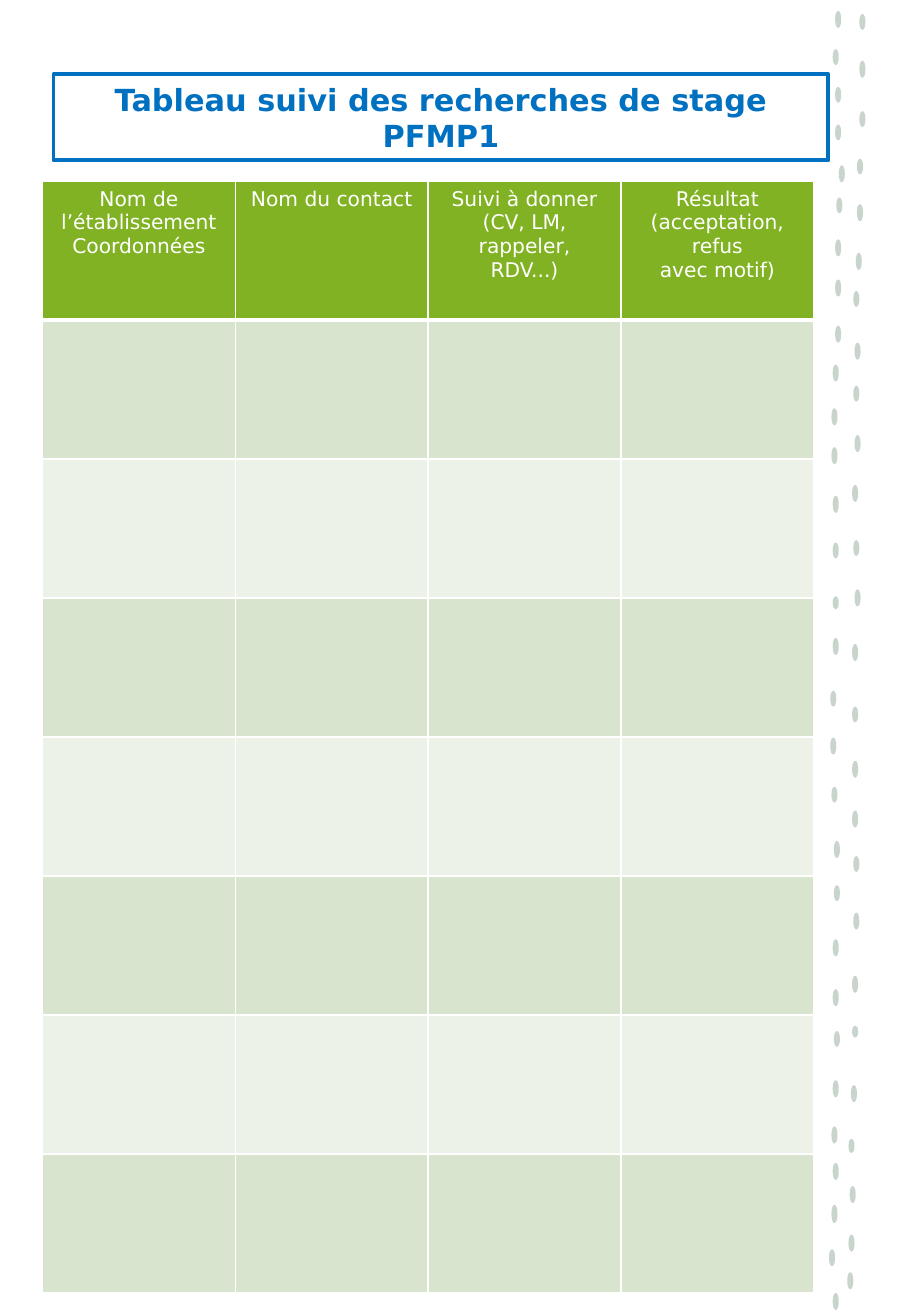
from lxml import etree
from pptx import Presentation
from pptx.dml.color import RGBColor
from pptx.enum.shapes import MSO_SHAPE
from pptx.enum.text import MSO_ANCHOR, PP_ALIGN
from pptx.oxml.ns import qn
from pptx.util import Inches, Pt

RECT = MSO_SHAPE.RECTANGLE
MIDDLE = MSO_ANCHOR.MIDDLE
CENTER = PP_ALIGN.CENTER

FONT = "DejaVu Sans"
COLORS = {
    "blue": "0070C0",
    "head": "81B223",
    "dark": "D8E4CD",
    "light": "EDF2E8",
    "white": "FFFFFF",
    "speck": "C8D4CC",
}

# Content
TITLE = "Tableau suivi des recherches de stage PFMP1"
HEADS = [
    "Nom de\nl’établissement\nCoordonnées",
    "Nom du contact",
    "Suivi à donner\n(CV, LM, rappeler,\nRDV...)",
    "Résultat\n(acceptation, refus\navec motif)",
]
ROWS = 8

# Specks of the right edge: centre x, centre y, height
SPECKS = [
    # outer column
    (7.1, 0.18, 0.13), (7.1, 0.57, 0.14), (7.1, 0.98, 0.13), (7.08, 1.37, 0.13),
    (7.06, 1.71, 0.01), (7.08, 1.75, 0.14), (7.07, 2.15, 0.14), (7.05, 2.46, 0.13),
    (7.06, 2.89, 0.14), (7.05, 3.24, 0.13), (7.06, 3.65, 0.14), (7.04, 4.06, 0.14),
    (7.05, 4.51, 0.13), (7.06, 4.92, 0.14), (7.04, 5.37, 0.14), (7.04, 5.88, 0.13),
    (7.04, 6.33, 0.14), (7.04, 6.74, 0.14), (7.05, 7.11, 0.13), (7.05, 7.58, 0.14),
    (7.04, 8.1, 0.14), (7.04, 8.49, 0.1), (7.03, 9, 0.14), (7.01, 9.43, 0.12),
    (7.02, 9.83, 0.14), (7.01, 10.23, 0.14), (7, 10.54, 0.14),
    # inner column
    (6.9, 0.16, 0.14), (6.88, 0.47, 0.13), (6.9, 0.78, 0.13), (6.9, 1.09, 0.13),
    (6.93, 1.43, 0.14), (6.91, 1.69, 0.13), (6.9, 2.04, 0.14), (6.9, 2.37, 0.14),
    (6.9, 2.75, 0.14), (6.88, 3.07, 0.14), (6.87, 3.43, 0.14), (6.87, 3.75, 0.14),
    (6.88, 4.15, 0.14), (6.88, 4.53, 0.13), (6.88, 4.96, 0.11), (6.88, 5.32, 0.14),
    (6.86, 5.75, 0.13), (6.86, 6.14, 0.14), (6.87, 6.54, 0.13), (6.89, 6.99, 0.14),
    (6.89, 7.35, 0.13), (6.88, 7.8, 0.14), (6.88, 8.21, 0.14), (6.89, 8.55, 0.13),
    (6.88, 8.96, 0.14), (6.87, 9.34, 0.14), (6.88, 9.64, 0.14), (6.87, 9.99, 0.15),
    (6.85, 10.35, 0.14), (6.88, 10.71, 0.14),
]
SPECK_W = 0.05
# Two curves from the right side round to it, in half widths and half heights
LEAF = [(1, 0), (1, 1.33), (-1, 1.33), (-1, 0), (-1, -1.33), (1, -1.33), (1, 0)]


def rgb(name):
    return RGBColor.from_string(COLORS[name])


def style(frame, size, color, bold):
    for par in frame.paragraphs:
        par.alignment = CENTER
        for run in par.runs:
            font = run.font
            font.name, font.size, font.bold = FONT, Pt(size), bold
            font.color.rgb = rgb(color)


def border(cell, side, width):
    props = cell._tc.get_or_add_tcPr()
    line = etree.SubElement(props, qn("a:ln" + side), w=str(Pt(width)))
    fill = etree.SubElement(line, qn("a:solidFill"))
    etree.SubElement(fill, qn("a:srgbClr"), val=COLORS["white"])


def bend(shape):
    """Turn each three straight segments into one curve."""
    lines = list(shape._element.iter(qn("a:lnTo")))
    for i in range(0, len(lines), 3):
        curve = etree.Element(qn("a:cubicBezTo"))
        lines[i].addprevious(curve)
        for line in lines[i:i + 3]:
            curve.append(line[0])
            line.getparent().remove(line)


def speck(x, y, tall):
    wide = min(SPECK_W, tall)
    dots = [(Inches(x + wide / 2 * u), Inches(y + tall / 2 * v)) for u, v in LEAF]
    pen = slide.shapes.build_freeform(*dots[0])
    pen.add_line_segments(dots[1:], close=True)
    leaf = pen.convert_to_shape()
    bend(leaf)
    leaf.shadow.inherit = False
    leaf.fill.solid()
    leaf.fill.fore_color.rgb = rgb("speck")
    leaf.line.fill.background()


deck = Presentation()
deck.slide_width, deck.slide_height = Inches(7.5), Inches(10.83)
slide = deck.slides.add_slide(deck.slide_layouts[6])

# Speckled edge
for spot in SPECKS:
    speck(*spot)

# Title box
box = slide.shapes.add_shape(RECT, Inches(0.44), Inches(0.61), Inches(6.38), Inches(0.71))
box.shadow.inherit = False
box.fill.background()
box.line.color.rgb = rgb("blue")
box.line.width = Pt(2.25)
frame = box.text_frame
frame.word_wrap = True
frame.vertical_anchor = MIDDLE
frame.text = TITLE
style(frame, 18, "blue", True)

# Follow-up table
table = slide.shapes.add_table(ROWS, len(HEADS), Inches(0.35), Inches(1.49),
                               Inches(6.35), Inches(9.15)).table
for r in range(ROWS):
    for c, head in enumerate(HEADS):
        cell = table.cell(r, c)
        for side in "LRTB":
            thick = (r, side) in ((0, "B"), (1, "T"))
            border(cell, side, 3 if thick else 1)
        cell.fill.solid()
        tone = "head" if r == 0 else "dark" if r % 2 else "light"
        cell.fill.fore_color.rgb = rgb(tone)
        if r == 0:
            cell.text_frame.text = head
            style(cell.text_frame, 12, "white", False)

deck.save("out.pptx")
